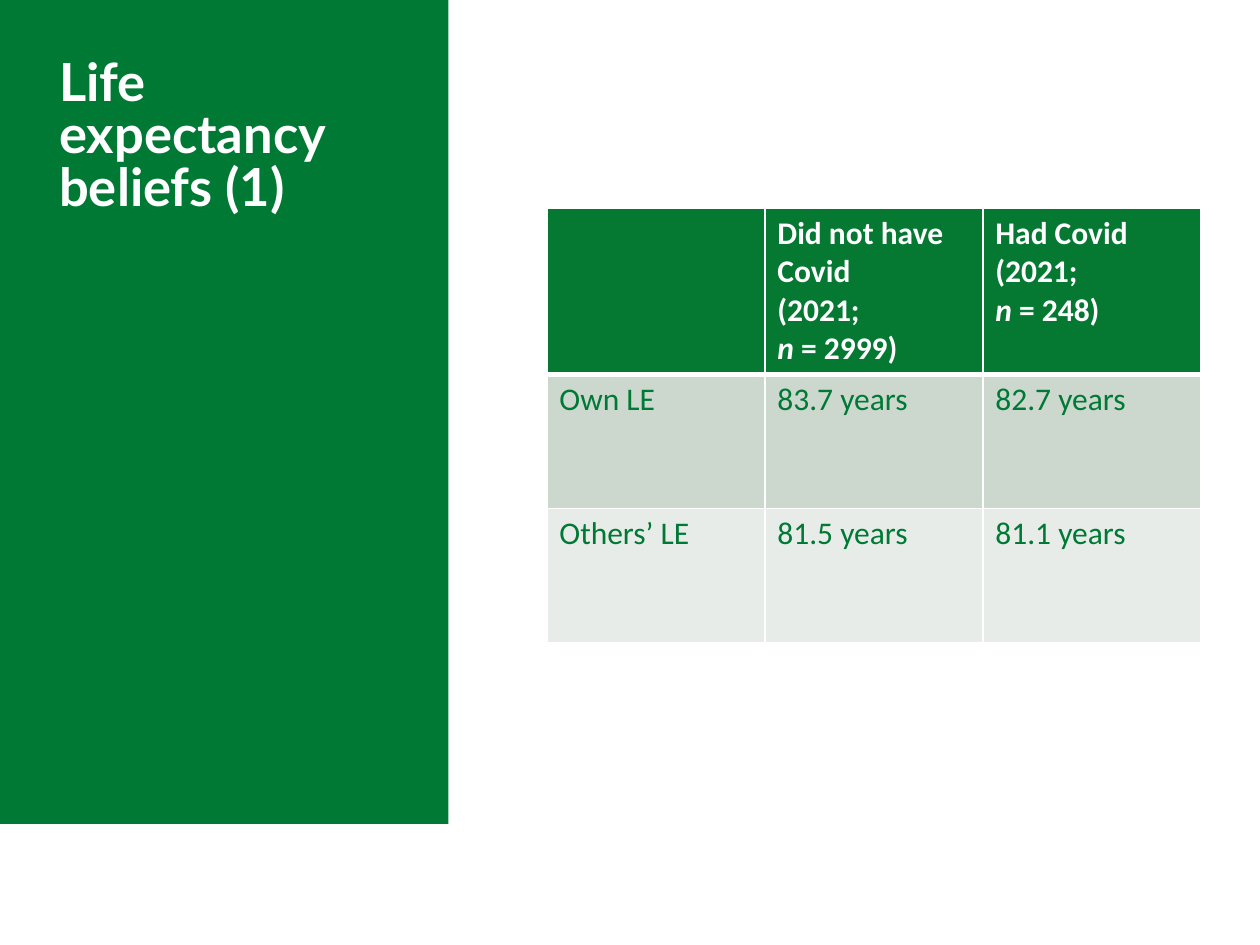
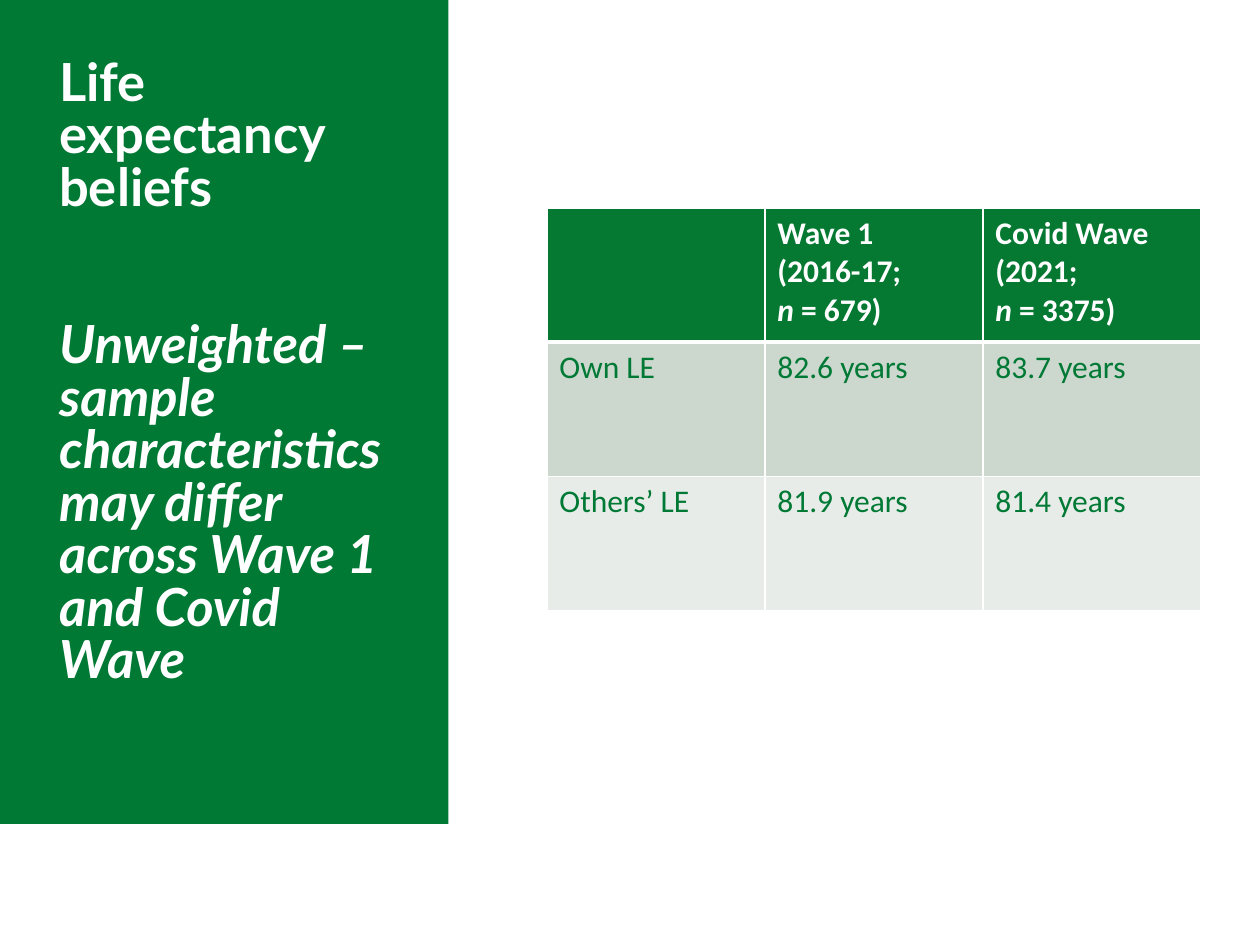
from lxml.etree import SubElement
from pptx import Presentation
from pptx.dml.color import RGBColor as RGB
from pptx.enum.shapes import MSO_SHAPE as SHAPE
from pptx.enum.text import MSO_ANCHOR as ANCHOR, MSO_AUTO_SIZE as FIT, PP_ALIGN as ALIGN
from pptx.oxml.ns import qn
from pptx.util import Inches, Pt

COLORS = {
    "panel": "007934",
    "header": "057932",
    "label": "007935",
    "band1": "CCD7CE",
    "band2": "E7ECE8",
    "white": "FFFFFF",
}
COLS, ROWS = 20, 15
ROW_HEIGHT = 2.13


def color(name):
    """Look up a palette colour."""
    return RGB.from_string(COLORS[name])


class Deck:
    """Holds the style and the current slide; lengths are grid columns and rows."""

    def __init__(self):
        """Start an empty 10 by 7.5 inch presentation."""
        self.prs = Presentation()
        self.prs.slide_width, self.prs.slide_height = Inches(10), Inches(7.5)
        self.s = None

    def box(self, x, y, w, h):
        """Turn grid columns and rows into lengths."""
        cw, rh = self.prs.slide_width / COLS, self.prs.slide_height / ROWS
        return round(x * cw), round(y * rh), round(w * cw), round(h * rh)

    def slide(self, *title):
        """Add a slide with the side panel and its title."""
        self.s = self.prs.slides.add_slide(self.prs.slide_layouts[5])
        self.panel()
        self.title(title)

    def panel(self):
        """Draw the side panel behind everything else."""
        sp = self.s.shapes.add_shape(SHAPE.RECTANGLE, *self.box(0, 0, 7.12, 13.08))
        sp.shadow.inherit = False
        sp.fill.solid()
        sp.fill.fore_color.rgb = color("panel")
        sp.line.fill.background()
        self.s.shapes._spTree.insert(2, sp._element)

    def title(self, paragraphs):
        """Place the title; any paragraph after the first is an italic remark."""
        sp = self.s.shapes.title
        sp.left, sp.top, sp.width, sp.height = self.box(0.94, 0.94, 5.66, 2.92)
        tf = sp.text_frame
        tf.word_wrap, tf.auto_size, tf.vertical_anchor = True, FIT.NONE, ANCHOR.TOP
        tf.margin_left = tf.margin_top = tf.margin_right = tf.margin_bottom = 0
        for i, text in enumerate(paragraphs):
            p = tf.add_paragraph() if i else tf.paragraphs[0]
            p.alignment, p.line_spacing = ALIGN.LEFT, Pt(30)
            p.space_before = Pt(60 if i else 0)
            self.run(p, text, 30, "Lato", "white", bold=True, italic=i > 0)

    def run(self, p, text, size, font, fill, bold=False, italic=False):
        """Append one formatted run."""
        r = p.add_run()
        r.text = text
        r.font.size, r.font.name = Pt(size), font
        r.font.bold, r.font.italic = bold, italic
        r.font.color.rgb = color(fill)

    def borders(self, cell, top=1, bottom=1):
        """Give a cell white borders."""
        tc_pr = cell._tc.get_or_add_tcPr()
        for side, width in zip("LRTB", (1, 1, top, bottom)):
            ln = SubElement(tc_pr, qn(f"a:ln{side}"), w=str(Pt(width)))
            fill = SubElement(ln, qn("a:solidFill"))
            SubElement(fill, qn("a:srgbClr"), val=COLORS["white"])

    def cell(self, cell, row, lines):
        """Fill a cell; each line is a list of (text, italic) pairs."""
        self.borders(cell, 3 if row == 1 else 1, 3 if row == 0 else 1)
        cell.fill.solid()
        cell.fill.fore_color.rgb = color(("header", "band1", "band2")[row])
        tf = cell.text_frame
        for i, line in enumerate(lines):
            p = tf.add_paragraph() if i else tf.paragraphs[0]
            for text, italic in line:
                self.run(p, text, 18, "Calibri", "label" if row else "white", row == 0, italic)

    def table(self, groups, own, others, header_height=ROW_HEIGHT):
        """Add the life expectancy table, with one column for each group."""
        heads = [[]] + [
            [[(name, False)], [(f"({year};", False)], [("n ", True), (f"= {n})", False)]]
            for name, year, n in groups
        ]
        body = [
            [[[(label, False)]]] + [[[(f"{v} years", False)]] for v in values]
            for label, values in (("Own LE", own), ("Others’ LE", others))
        ]
        heights = [header_height, ROW_HEIGHT, ROW_HEIGHT]
        frame = self.s.shapes.add_table(
            3, len(heads), *self.box(8.68, 3.3, 10.38, sum(heights)))
        for i, cells in enumerate([heads] + body):
            frame.table.rows[i].height = self.box(0, 0, 0, heights[i])[3]
            for j, lines in enumerate(cells):
                self.cell(frame.table.cell(i, j), i, lines)


def main():
    """Build the two slides."""
    deck = Deck()
    deck.slide("Life expectancy beliefs (1)")
    deck.table(
        [("Did not have Covid", "2021", 2999), ("Had Covid", "2021", 248)],
        own=(83.7, 82.7), others=(81.5, 81.1), header_height=2.6)
    deck.slide(
        "Life expectancy beliefs",
        "Unweighted – sample characteristics may differ across Wave 1 and Covid Wave")
    deck.table(
        [("Wave 1", "2016-17", 679), ("Covid Wave", "2021", 3375)],
        own=(82.6, 83.7), others=(81.9, 81.4))
    deck.prs.save("out.pptx")


if __name__ == "__main__":
    main()
